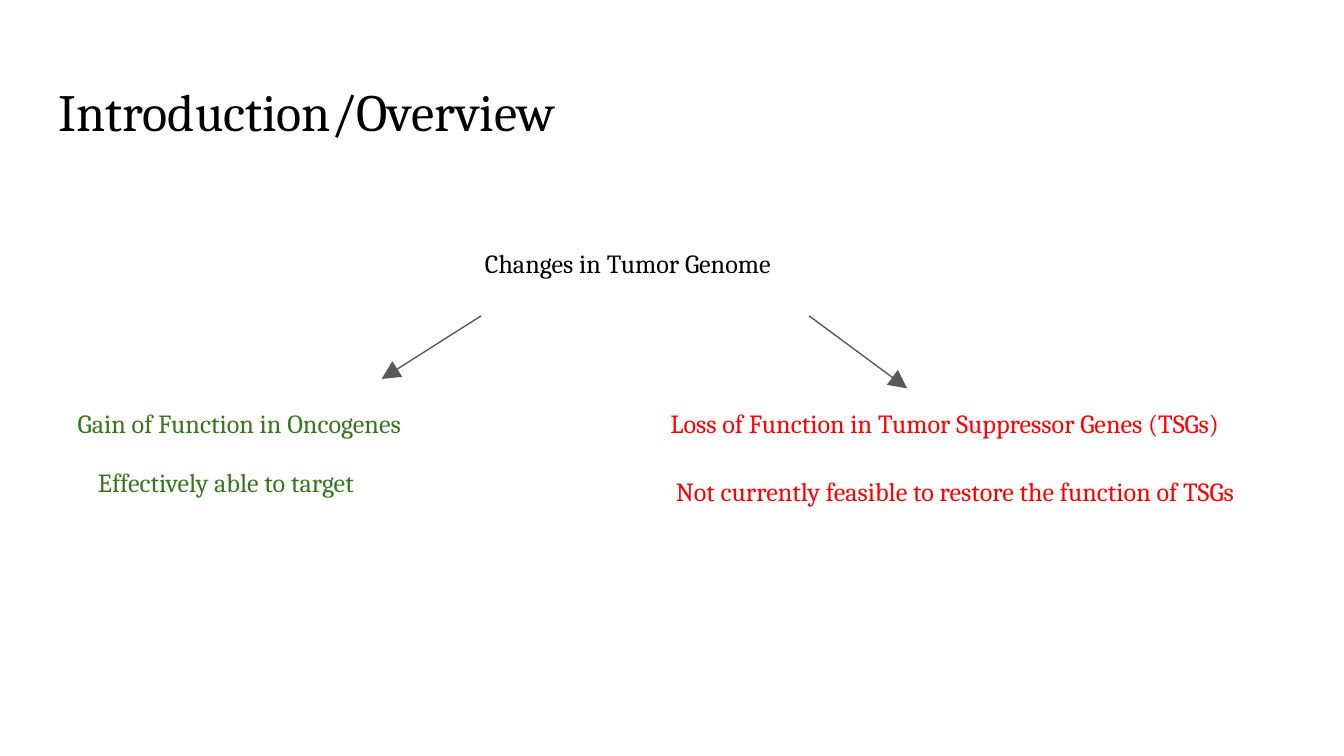
import pptx
import pptx.util
import pptx.dml.color
import pptx.enum.shapes
import pptx.enum.text
import pptx.oxml.ns
import lxml.etree

Inches = pptx.util.Inches
RGBColor = pptx.dml.color.RGBColor

BLACK = RGBColor(0x00, 0x00, 0x00)
GRAY = RGBColor(0x59, 0x59, 0x59)
GREEN = RGBColor(0x38, 0x76, 0x1D)
RED = RGBColor(0xFF, 0x00, 0x00)
FONT = "Cambria"


def add_text(slide, text, left, top, width, height, color, size=14):
    shape = slide.shapes.add_textbox(
        Inches(left), Inches(top), Inches(width), Inches(height))
    frame = shape.text_frame
    frame.word_wrap = True
    frame.vertical_anchor = pptx.enum.text.MSO_ANCHOR.TOP
    frame.margin_left = frame.margin_right = Inches(0.1)
    frame.margin_top = frame.margin_bottom = Inches(0.1)
    paragraph = frame.paragraphs[0]
    paragraph.text = text
    paragraph.font.name = FONT
    paragraph.font.size = pptx.util.Pt(size)
    paragraph.font.color.rgb = color


def add_arrow(slide, start_x, start_y, end_x, end_y):
    connector = slide.shapes.add_connector(
        pptx.enum.shapes.MSO_CONNECTOR.STRAIGHT,
        Inches(start_x), Inches(start_y), Inches(end_x), Inches(end_y))
    connector.line.color.rgb = GRAY
    connector.line.width = pptx.util.Pt(0.75)
    qn = pptx.oxml.ns.qn
    line = connector.line._get_or_add_ln()
    lxml.etree.SubElement(
        line, qn("a:tailEnd"), type="triangle", w="lg", len="lg")
    lxml.etree.SubElement(connector._element.spPr, qn("a:effectLst"))


def add_genome_root(slide, left, top, width, height):
    add_text(slide, "Changes in Tumor Genome", left, top, width, height, BLACK)
    arrow_top = top + 0.61
    add_arrow(slide, left + 0.07, arrow_top, left - 0.67, arrow_top + 0.47)
    add_arrow(slide, left + 2.51, arrow_top, left + 3.24, arrow_top + 0.54)


def add_branch(slide, left, top, width, color, change, outcome,
               outcome_indent, outcome_drop, outcome_width):
    add_text(slide, change, left, top, width, 0.51, color)
    add_text(slide, outcome, left + outcome_indent, top + outcome_drop,
             outcome_width, 0.73, color)


def main():
    presentation = pptx.Presentation()
    presentation.slide_width = Inches(10)
    presentation.slide_height = Inches(10 * 9 / 16)
    slide = presentation.slides.add_slide(presentation.slide_layouts[6])

    add_text(slide, "Introduction/Overview", 0.34, 0.49, 9.32, 0.63, BLACK, 28)
    add_genome_root(slide, 3.51, 1.74, 2.82, 0.37)
    add_branch(slide, 0.48, 2.93, 2.94, GREEN,
               "Gain of Function in Oncogenes",
               "Effectively able to target", 0.15, 0.44, 3.82)
    add_branch(slide, 4.89, 2.93, 4.92, RED,
               "Loss of Function in Tumor Suppressor Genes (TSGs)",
               "Not currently feasible to restore the function of TSGs",
               0.04, 0.51, 4.84)

    presentation.save("out.pptx")


if __name__ == "__main__":
    main()
